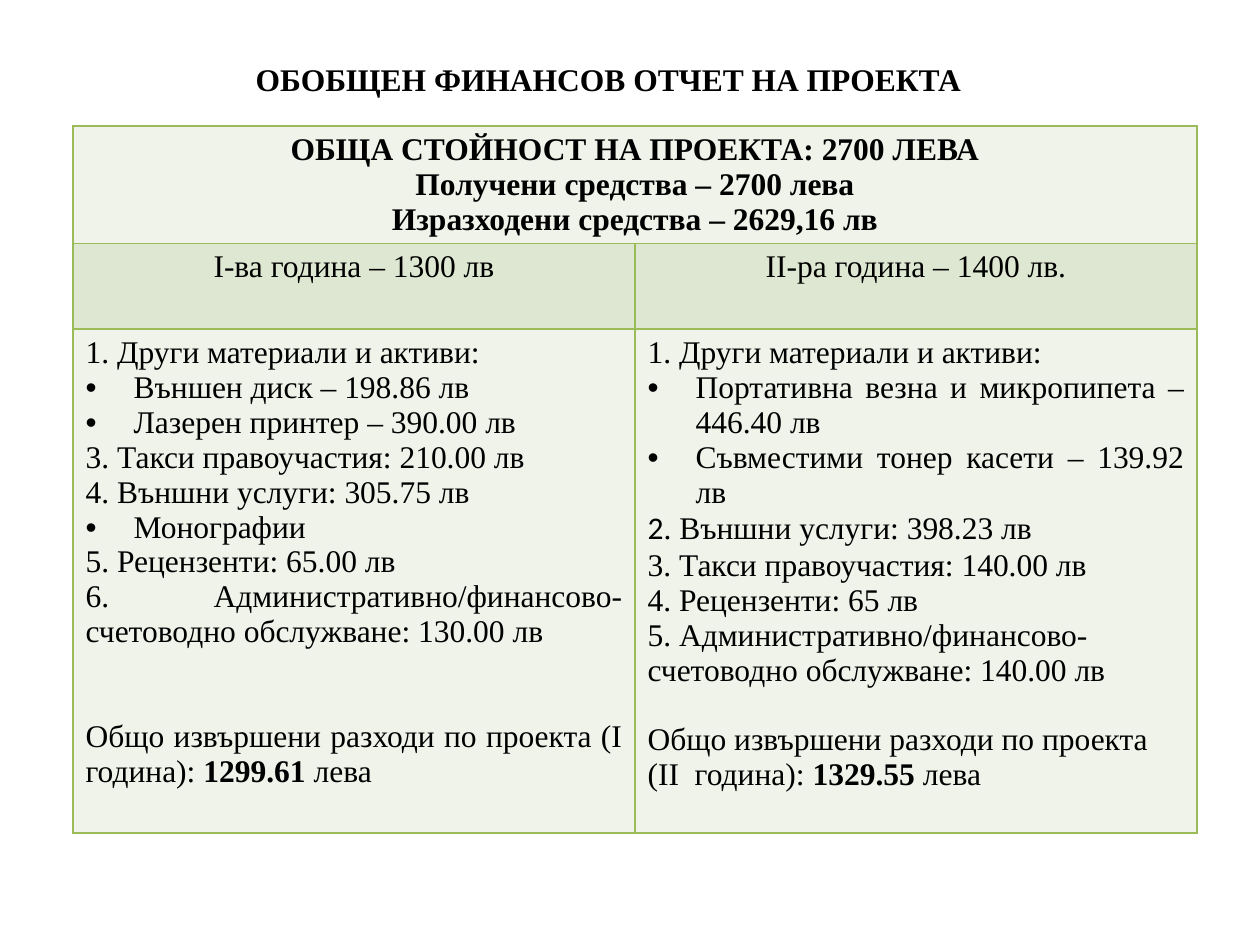
from dataclasses import dataclass

from lxml import etree
from pptx import Presentation
from pptx.dml.color import RGBColor
from pptx.enum.text import MSO_ANCHOR, PP_ALIGN
from pptx.oxml.ns import qn
from pptx.util import Emu, Pt

CENTER, JUSTIFY, LEFT = PP_ALIGN.CENTER, PP_ALIGN.JUSTIFY, PP_ALIGN.LEFT
MIDDLE = MSO_ANCHOR.MIDDLE

EMU_PER_PX = 914400 / 126
COLORS = {"text": "000000", "border": "9BBB59", "light": "EFF3EA", "band": "DEE7D1"}
SERIF, SANS = "Times New Roman", "Calibri"
BULLET_INDENT = 48


@dataclass(frozen=True)
class Span:
    text: str
    bold: bool = False
    font: str = SERIF


@dataclass(frozen=True)
class Line:
    spans: tuple[Span, ...]
    align: int = JUSTIFY
    bullet: bool = False
    gap_before: int = 0


@dataclass(frozen=True)
class Entry:
    row: int
    column: int
    fill: str
    lines: tuple[Line, ...]


def px(length: int) -> Emu:
    return Emu(round(length * EMU_PER_PX))


def plain(text: str, align: int = JUSTIFY, bold: bool = False) -> Line:
    return Line((Span(text, bold),), align)


def item(text: str) -> Line:
    return Line((Span(text),), bullet=True)


def total(label: str, amount: str, align: int, gap_before: int) -> Line:
    spans = Span(label), Span(amount, bold=True), Span("лева")
    return Line(spans, align, gap_before=gap_before)


def add_bullet(paragraph) -> None:
    properties = paragraph._p.get_or_add_pPr()
    properties.set("marL", str(px(BULLET_INDENT)))
    properties.set("indent", str(-px(BULLET_INDENT)))
    etree.SubElement(properties, qn("a:buFont"), typeface="Arial")
    etree.SubElement(properties, qn("a:buChar"), char="•")


def write_lines(frame, lines: tuple[Line, ...]) -> None:
    for index, line in enumerate(lines):
        paragraph = frame.add_paragraph() if index else frame.paragraphs[0]
        paragraph.alignment = line.align
        paragraph.space_before = px(line.gap_before)
        if line.bullet:
            add_bullet(paragraph)
        for span in line.spans:
            run = paragraph.add_run()
            run.text = span.text
            run.font.name = span.font
            run.font.size = Pt(18)
            run.font.bold = span.bold
            run.font.color.rgb = RGBColor.from_string(COLORS["text"])


def style_cell(cell, fill: str) -> None:
    properties = cell._tc.get_or_add_tcPr()
    for side in ("lnL", "lnR", "lnT", "lnB"):
        border = etree.SubElement(properties, qn(f"a:{side}"), w=str(Pt(1)))
        solid = etree.SubElement(border, qn("a:solidFill"))
        etree.SubElement(solid, qn("a:srgbClr"), val=COLORS["border"])
    cell.fill.solid()
    cell.fill.fore_color.rgb = RGBColor.from_string(COLORS[fill])


ROW_HEIGHTS = (117, 86, 504)
ROW_FILLS = ("light", "band", "light")
COLUMN_WIDTH = 562
ENTRIES = (
    Entry(0, 0, "light", (
        plain("ОБЩА СТОЙНОСТ НА ПРОЕКТА: 2700 ЛЕВА", CENTER, True),
        plain("Получени средства – 2700 лева", CENTER, True),
        plain("Изразходени средства – 2629,16 лв", CENTER, True),
    )),
    Entry(0, 1, "light", ()),
    Entry(1, 0, "band", (plain("I-ва година – 1300 лв", CENTER),)),
    Entry(1, 1, "band", (plain("II-ра година – 1400 лв.", CENTER),)),
    Entry(2, 0, "light", (
        plain("1. Други материали и активи:"),
        item("Външен диск – 198.86 лв"),
        item("Лазерен принтер – 390.00 лв"),
        plain("3. Такси правоучастия: 210.00 лв"),
        plain("4. Външни услуги: 305.75 лв"),
        item("Монографии"),
        plain("5. Рецензенти: 65.00 лв"),
        plain("6. Административно/финансово-счетоводно обслужване: 130.00 лв"),
        total("Общо извършени разходи по проекта (I година): ", "1299.61 ", JUSTIFY, 70),
    )),
    Entry(2, 1, "light", (
        plain("1. Други материали и активи:"),
        item("Портативна везна и микропипета – 446.40 лв"),
        item("Съвместими тонер касети – 139.92 лв"),
        Line((Span("2", font=SANS), Span(". Външни услуги: 398.23 лв")), LEFT),
        plain("3. Такси правоучастия: 140.00 лв", LEFT),
        plain("4. Рецензенти: 65 лв", LEFT),
        plain("5. Административно/финансово-счетоводно обслужване: 140.00 лв", LEFT),
        total("Общо извършени разходи по проекта (II  година): ", "1329.55 ", LEFT, 35),
    )),
)


def add_title(slide) -> None:
    title = slide.shapes.title
    title.left, title.top, title.width, title.height = map(px, (73, 32, 1071, 94))
    title.text_frame.vertical_anchor = MIDDLE
    write_lines(
        title.text_frame, (plain("ОБОБЩЕН ФИНАНСОВ ОТЧЕТ НА ПРОЕКТА", CENTER, True),)
    )


def add_report(slide) -> None:
    frame = slide.shapes.add_table(
        len(ROW_HEIGHTS), 2, px(73), px(126), px(2 * COLUMN_WIDTH), px(sum(ROW_HEIGHTS))
    )
    report = frame.table
    for column in report.columns:
        column.width = px(COLUMN_WIDTH)
    for row, height in zip(report.rows, ROW_HEIGHTS):
        row.height = px(height)
    report.cell(0, 0).merge(report.cell(0, 1))
    for entry in ENTRIES:
        cell = report.cell(entry.row, entry.column)
        style_cell(cell, entry.fill)
        write_lines(cell.text_frame, entry.lines)


def main() -> None:
    presentation = Presentation()
    presentation.slide_width, presentation.slide_height = px(1260), px(945)
    slide = presentation.slides.add_slide(presentation.slide_layouts[0])
    subtitle = slide.placeholders[1]._element
    subtitle.getparent().remove(subtitle)
    add_title(slide)
    add_report(slide)
    presentation.save("out.pptx")


if __name__ == "__main__":
    main()
